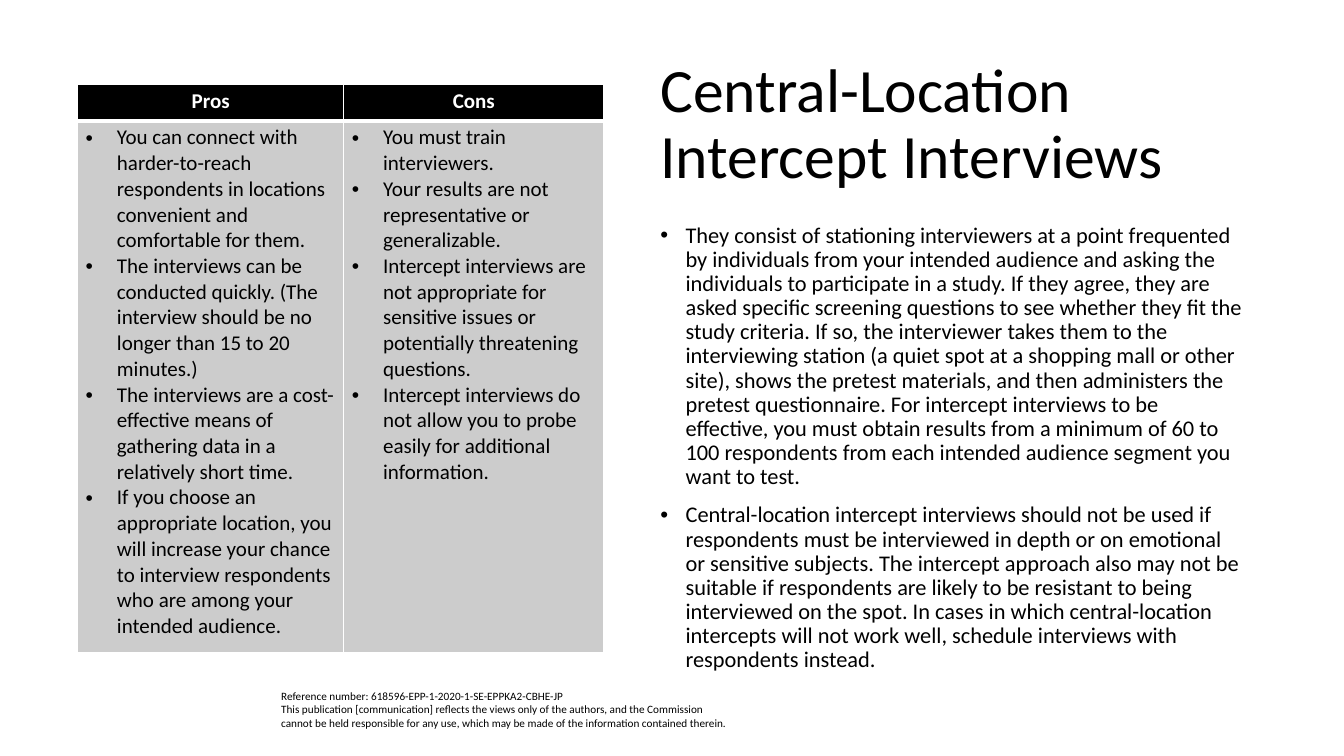
from dataclasses import dataclass

from lxml import etree
from pptx import Presentation
from pptx import util as u
from pptx.dml.color import RGBColor
from pptx.enum import text
from pptx.oxml.ns import qn


@dataclass(frozen=True)
class Theme:
    font: str = "Calibri"
    ink: str = "000000"
    paper: str = "FFFFFF"
    panel: str = "CCCCCC"
    title: int = 44
    body: int = 16
    cell: int = 15
    note: int = 8


T = Theme()
W, H = 13.33, 7.5

TITLE = "Central-Location Intercept Interviews"
POINTS = [
    "They consist of stationing interviewers at a point frequented by individuals from your "
    "intended audience and asking the individuals to participate in a study. If they agree, they "
    "are asked specific screening questions to see whether they fit the study criteria. If so, the "
    "interviewer takes them to the interviewing station (a quiet spot at a shopping mall or other "
    "site), shows the pretest materials, and then administers the pretest questionnaire. For "
    "intercept interviews to be effective, you must obtain results from a minimum of 60 to 100 "
    "respondents from each intended audience segment you want to test.",
    "Central-location intercept interviews should not be used if respondents must be interviewed "
    "in depth or on emotional or sensitive subjects. The intercept approach also may not be "
    "suitable if respondents are likely to be resistant to being interviewed on the spot. In cases "
    "in which central-location intercepts will not work well, schedule interviews with "
    "respondents instead.",
]
COLUMNS = {
    "Pros": [
        "You can connect with harder-to-reach respondents in locations convenient and comfortable "
        "for them.",
        "The interviews can be conducted quickly. (The interview should be no longer than 15 to 20 "
        "minutes.)",
        "The interviews are a cost-effective means of gathering data in a relatively short time.",
        "If you choose an appropriate location, you will increase your chance to interview "
        "respondents who are among your intended audience.",
    ],
    "Cons": [
        "You must train interviewers.",
        "Your results are not representative or generalizable.",
        "Intercept interviews are not appropriate for sensitive issues or potentially threatening "
        "questions.",
        "Intercept interviews do not allow you to probe easily for additional information.",
    ],
}
REFERENCE = [
    "Reference number: 618596-EPP-1-2020-1-SE-EPPKA2-CBHE-JP",
    "This publication [communication] reflects the views only of the authors, and the Commission "
    "cannot be held responsible for any use, which may be made of the information contained therein.",
]


def add_run(p, words, size, color=T.ink, bold=False):
    r = p.add_run()
    r.text = words
    r.font.name, r.font.size, r.font.bold = T.font, u.Pt(size), bold
    r.font.color.rgb = RGBColor.from_string(color)


def set_bullet(p, indent):
    pPr = p._p.get_or_add_pPr()
    pPr.set("marL", str(u.Inches(indent)))
    pPr.set("indent", str(-u.Inches(indent)))
    etree.SubElement(pPr, qn("a:buFont"), typeface="Arial")
    etree.SubElement(pPr, qn("a:buChar"), char="•")


def add_list(tf, items, size, indent, line=None, gap=0):
    for i, item in enumerate(items):
        p = tf.add_paragraph() if i else tf.paragraphs[0]
        set_bullet(p, indent)
        p.line_spacing = line
        p.space_before = u.Pt(gap if i else 0)
        add_run(p, item, size)


def place(sp, box):
    sp.left, sp.top, sp.width, sp.height = (u.Inches(v) for v in box)


def style_cell(cell, fill, top, bottom):
    cell.margin_left = cell.margin_right = u.Inches(0.08)
    cell.margin_top = cell.margin_bottom = u.Inches(0.04)
    tcPr = cell._tc.get_or_add_tcPr()
    for side, width in zip("LRTB", (1, 1, top, bottom)):
        ln = etree.SubElement(tcPr, qn(f"a:ln{side}"), w=str(u.Pt(width)))
        line_fill = etree.SubElement(ln, qn("a:solidFill"))
        etree.SubElement(line_fill, qn("a:srgbClr"), val=T.paper)
    cell.fill.solid()
    cell.fill.fore_color.rgb = RGBColor.from_string(fill)


# Pros and cons table
def pros_cons(s, box):
    x, y, w, h = box
    table = s.shapes.add_table(2, len(COLUMNS), *(u.Inches(v) for v in box)).table
    header = 0.36
    for row, height in zip(table.rows, (header, h - header)):
        row.height = u.Inches(height)
    first = 2.64
    for col, width in zip(table.columns, (first, w - first)):
        col.width = u.Inches(width)
    for i, (heading, items) in enumerate(COLUMNS.items()):
        head, body = table.cell(0, i), table.cell(1, i)
        style_cell(head, T.ink, 1, 3)
        style_cell(body, T.panel, 3, 1)
        p = head.text_frame.paragraphs[0]
        p.alignment = text.PP_ALIGN.CENTER
        add_run(p, heading, T.cell, T.paper, True)
        add_list(body.text_frame, items, T.cell, 0.31)


# Title above the description
def description(s, box):
    x, y, w, h = box
    title, body = s.shapes.title, s.placeholders[1]
    place(title, (x, y, w, 1.45))
    place(body, (x, y + 1.65, w, h - 1.65))
    for sp in (title, body):
        sp.text_frame.word_wrap = True
        sp.text_frame.auto_size = text.MSO_AUTO_SIZE.NONE
    title.text_frame.vertical_anchor = text.MSO_ANCHOR.MIDDLE
    p = title.text_frame.paragraphs[0]
    p.alignment = text.PP_ALIGN.LEFT
    p.line_spacing = 0.9
    add_run(p, TITLE, T.title)
    add_list(body.text_frame, POINTS, T.body, 0.25, 0.9, 10)


# Reference note at the foot
def reference(s, box):
    tf = s.shapes.add_textbox(*(u.Inches(v) for v in box)).text_frame
    tf.word_wrap = True
    p = tf.paragraphs[0]
    for i, line in enumerate(REFERENCE):
        if i:
            p.add_line_break()
        add_run(p, line, T.note)


def main():
    prs = Presentation()
    prs.slide_width, prs.slide_height = u.Inches(W), u.Inches(H)
    s = prs.slides.add_slide(prs.slide_layouts[1])
    reference(s, (2.69, 6.79, 4.64, 0.5))
    pros_cons(s, (0.77, 0.84, 5.22, 5.63))
    description(s, (6.45, 0.52, 5.97, 6.23))
    prs.save("out.pptx")


if __name__ == "__main__":
    main()
